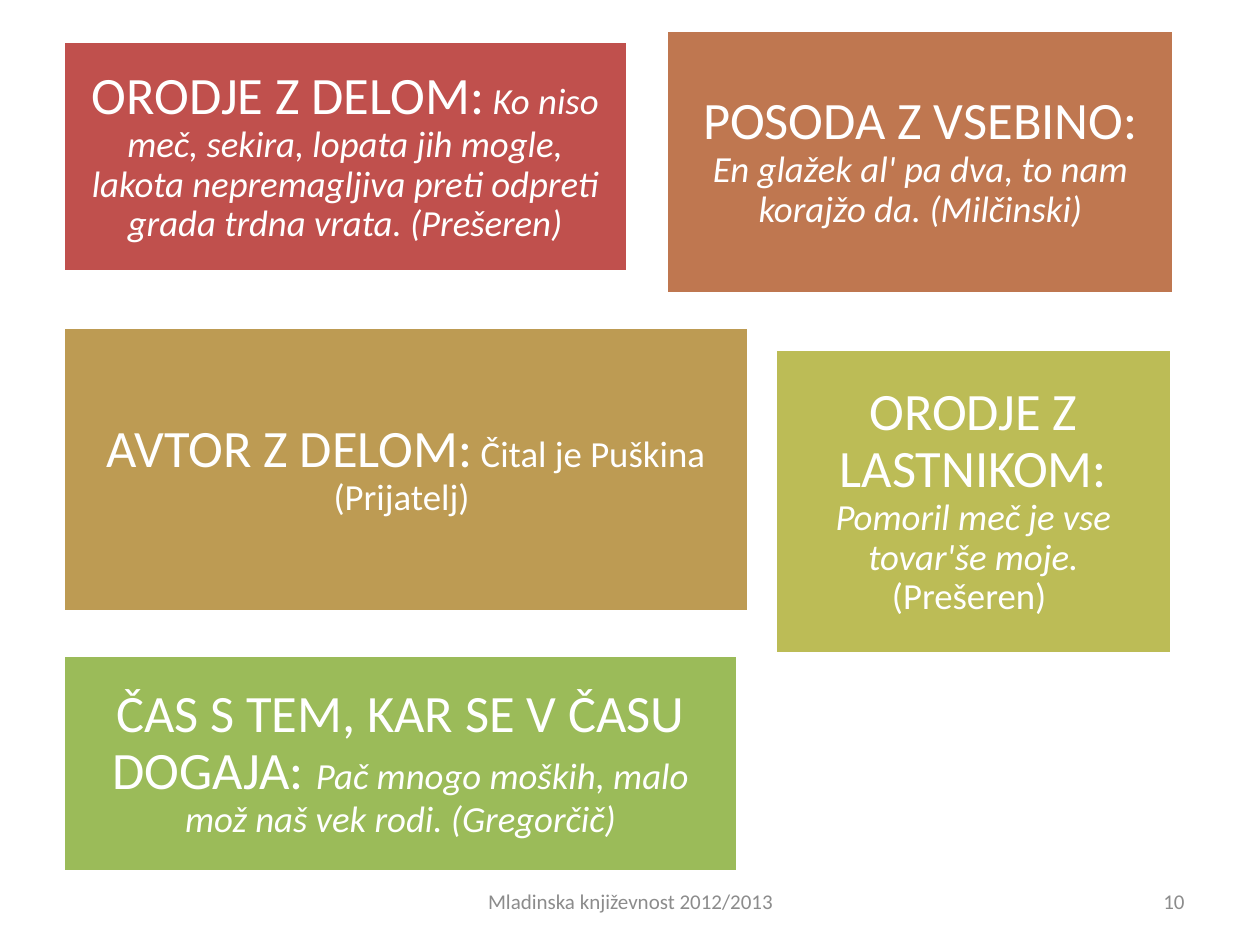
from dataclasses import dataclass

import pptx
import pptx.dml.color
import pptx.enum.shapes
import pptx.enum.text
import pptx.util

PX = 9144  # EMU per px, 100 px to the inch
FONT = "Calibri"
COLORS = {
    "red": "C0504D",
    "orange": "BF7750",
    "ochre": "BD9B53",
    "olive": "BCBC56",
    "green": "9BBB59",
    "white": "FFFFFF",
    "gray": "8C8C8C",
}
ALIGN = pptx.enum.text.PP_ALIGN


@dataclass
class Box:
    left: int
    top: int
    width: int
    height: int

    def emu(self) -> list[int]:
        return [n * PX for n in (self.left, self.top, self.width, self.height)]


@dataclass
class Run:
    text: str
    size: int = 21
    italic: bool = False


@dataclass
class Card:
    box: Box
    color: str
    runs: list[Run]


CARDS = [
    Card(Box(50, 33, 448, 183), "red", [
        Run("ORODJE Z DELOM:", 30),
        Run(" "),
        Run("Ko niso meč, sekira, lopata jih mogle, lakota nepremagljiva "
            "preti odpreti grada trdna vrata. (Prešeren)", italic=True),
    ]),
    Card(Box(529, 24, 403, 209), "orange", [
        Run("POSODA Z VSEBINO: ", 30),
        Run("En glažek al' pa dva, to nam korajžo da. (Milčinski)", italic=True),
    ]),
    Card(Box(50, 260, 544, 226), "ochre", [
        Run("AVTOR Z DELOM:", 30),
        Run(" Čital je Puškina (Prijatelj) "),
    ]),
    Card(Box(615, 277, 315, 242), "olive", [
        Run("ORODJE Z LASTNIKOM: ", 30),
        Run("Pomoril meč je vse tovar'še moje.", italic=True),
        Run(" (Prešeren) "),
    ]),
    Card(Box(50, 520, 536, 172), "green", [
        Run("ČAS S TEM, KAR SE V ČASU DOGAJA: ", 30),
        Run("Pač mnogo moških, malo mož naš vek rodi. (Gregorčič)", italic=True),
    ]),
]


def rgb(name: str) -> pptx.dml.color.RGBColor:
    return pptx.dml.color.RGBColor.from_string(COLORS[name])


def style_text(shape, align, color: str):
    """Centre the text vertically, wrap it and return its styled paragraph."""
    frame = shape.text_frame
    frame.word_wrap = True
    frame.vertical_anchor = pptx.enum.text.MSO_ANCHOR.MIDDLE
    paragraph = frame.paragraphs[0]
    paragraph.alignment = align
    paragraph.font.name = FONT
    paragraph.font.color.rgb = rgb(color)
    return paragraph


def add_card(slide, card: Card) -> None:
    shape = slide.shapes.add_shape(
        pptx.enum.shapes.MSO_SHAPE.RECTANGLE, *card.box.emu())
    shape.shadow.inherit = False
    shape.fill.solid()
    shape.fill.fore_color.rgb = rgb(card.color)
    shape.line.color.rgb = rgb("white")
    shape.line.width = pptx.util.Pt(2)
    frame = shape.text_frame
    frame.margin_left = frame.margin_right = 12 * PX
    frame.margin_top = frame.margin_bottom = 12 * PX
    paragraph = style_text(shape, ALIGN.CENTER, "white")
    paragraph.line_spacing = 0.9
    for part in card.runs:
        run = paragraph.add_run()
        run.text = part.text
        run.font.size = pptx.util.Pt(part.size)
        run.font.italic = part.italic


def add_footer(slide, box: Box, text: str, align) -> None:
    shape = slide.shapes.add_textbox(*box.emu())
    paragraph = style_text(shape, align, "gray")
    paragraph.font.size = pptx.util.Pt(12)
    paragraph.add_run().text = text


def main() -> None:
    presentation = pptx.Presentation()
    presentation.slide_width = 1000 * PX
    presentation.slide_height = 750 * PX
    slide = presentation.slides.add_slide(presentation.slide_layouts[6])
    for card in CARDS:
        add_card(slide, card)
    add_footer(slide, Box(342, 695, 317, 40),
               "Mladinska književnost 2012/2013", ALIGN.CENTER)
    add_footer(slide, Box(717, 695, 233, 40), "10", ALIGN.RIGHT)
    presentation.save("out.pptx")


if __name__ == "__main__":
    main()
